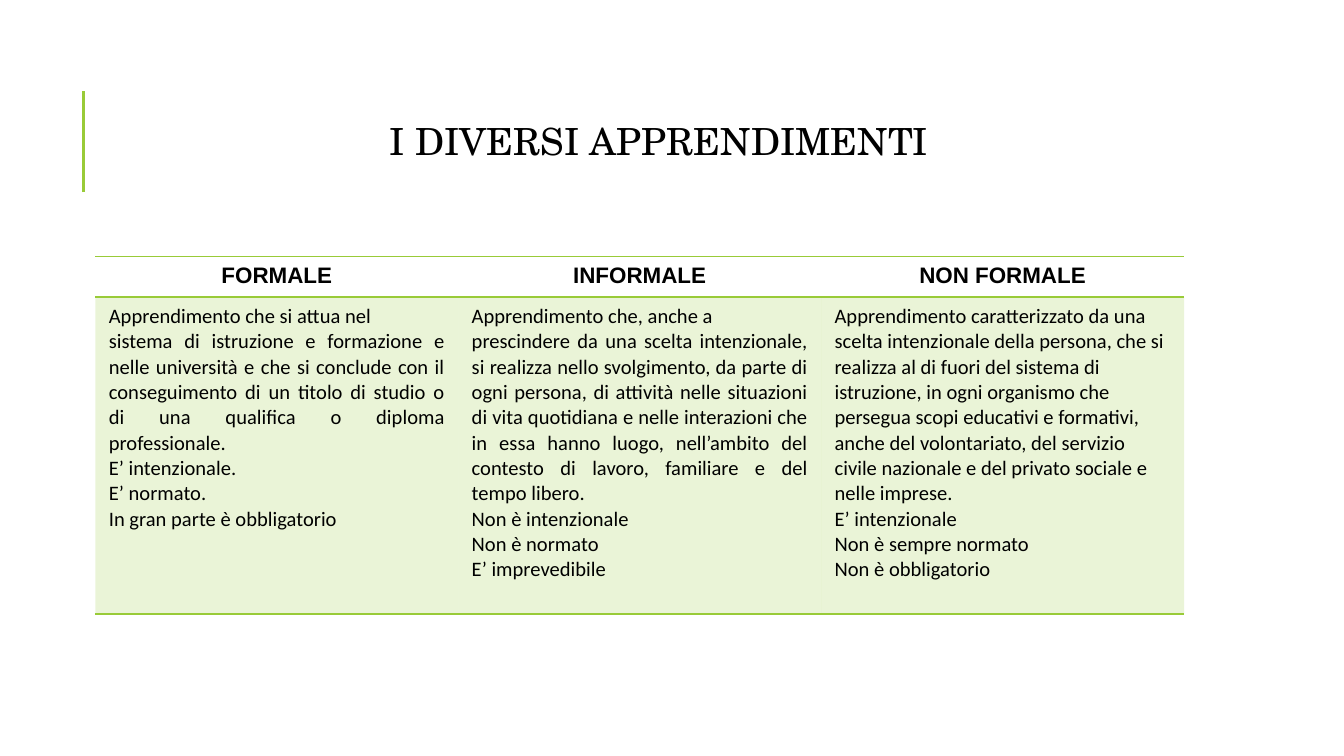
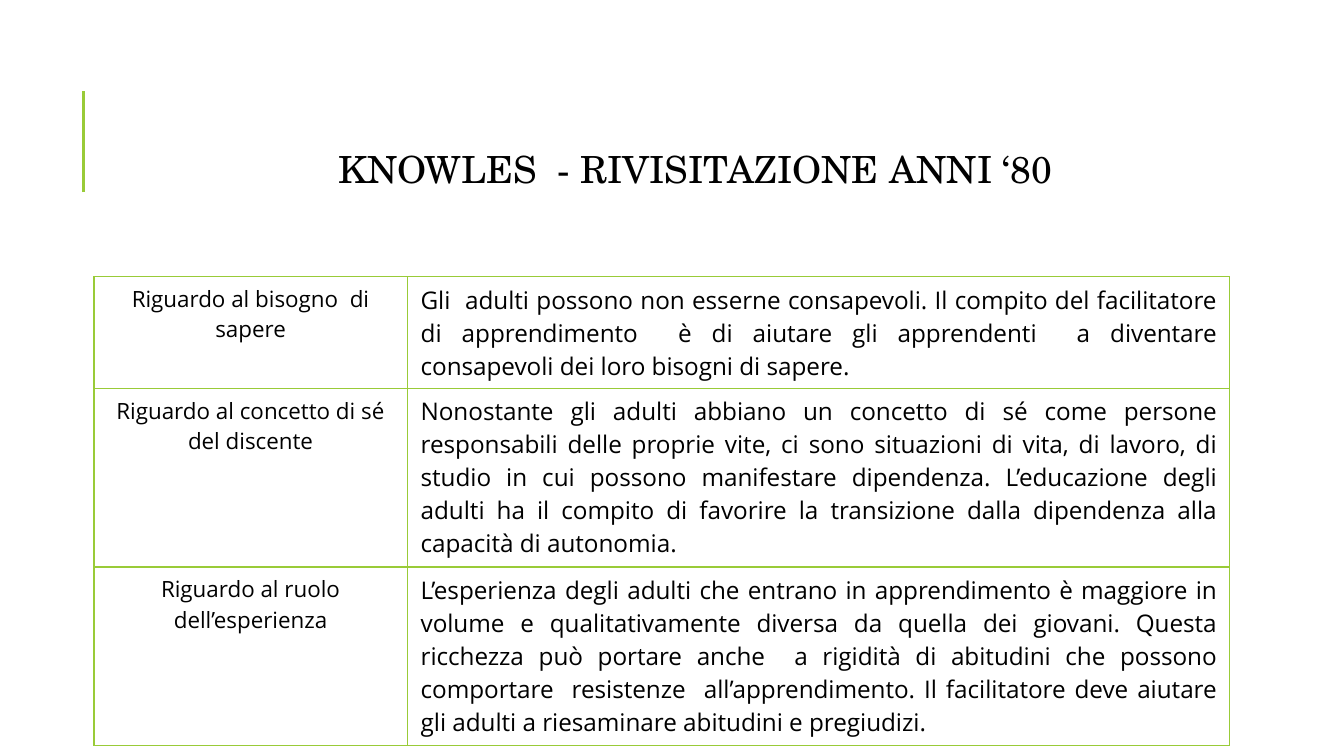
from lxml.etree import SubElement
from pptx import Presentation
from pptx.dml.color import RGBColor
from pptx.enum.shapes import MSO_CONNECTOR
from pptx.enum.text import MSO_ANCHOR, PP_ALIGN
from pptx.oxml import parse_xml
from pptx.oxml.ns import nsdecls, qn
from pptx.util import Inches, Pt

GREEN = RGBColor(0x99, 0xCB, 0x38)
BLACK = RGBColor(0x00, 0x00, 0x00)
WHITE = RGBColor(0xFF, 0xFF, 0xFF)
TITLE_FONT = "TeX Gyre Schola"
LEFT, CENTER, JUSTIFY = PP_ALIGN.LEFT, PP_ALIGN.CENTER, PP_ALIGN.JUSTIFY

LEARNING = [
    ("FORMALE", JUSTIFY, [
        "Apprendimento che si attua nel",
        "sistema di istruzione e formazione e nelle università e che si conclude con il "
        "conseguimento di un titolo di studio o di una qualifica o diploma professionale.",
        "E’ intenzionale.",
        "E’ normato.",
        "In gran parte è obbligatorio",
    ]),
    ("INFORMALE", JUSTIFY, [
        "Apprendimento che, anche a",
        "prescindere da una scelta intenzionale, si realizza nello svolgimento, da parte di "
        "ogni persona, di attività nelle situazioni di vita quotidiana e nelle interazioni che "
        "in essa hanno luogo, nell’ambito del contesto di lavoro, familiare e del tempo libero.",
        "Non è intenzionale",
        "Non è normato",
        "E’ imprevedibile",
    ]),
    ("NON FORMALE", LEFT, [
        "Apprendimento caratterizzato da una scelta intenzionale della persona, che si realizza "
        "al di fuori del sistema di istruzione, in ogni organismo che persegua scopi educativi e "
        "formativi, anche del volontariato, del servizio civile nazionale e del privato sociale e",
        "nelle imprese.",
        "E’ intenzionale",
        "Non è sempre normato",
        "Non è obbligatorio",
    ]),
]

KNOWLES = [
    ("Riguardo al bisogno  di sapere",
     "Gli  adulti possono non esserne consapevoli. Il compito del facilitatore di "
     "apprendimento  è di aiutare gli apprendenti  a diventare consapevoli dei loro bisogni "
     "di sapere."),
    ("Riguardo al concetto di sé del discente",
     "Nonostante gli adulti abbiano un concetto di sé come persone responsabili delle proprie "
     "vite, ci sono situazioni di vita, di lavoro, di studio in cui possono manifestare "
     "dipendenza. L’educazione degli adulti ha il compito di favorire la transizione dalla "
     "dipendenza alla capacità di autonomia."),
    ("Riguardo al ruolo dell’esperienza",
     "L’esperienza degli adulti che entrano in apprendimento è maggiore in volume e "
     "qualitativamente diversa da quella dei giovani. Questa ricchezza può portare anche  a "
     "rigidità di abitudini che possono comportare  resistenze  all’apprendimento. Il "
     "facilitatore deve aiutare gli adulti a riesaminare abitudini e pregiudizi."),
]


def write(tf, text, font, size, align=LEFT, bold=False, spacing=None):
    """Write each line of text as a formatted paragraph."""
    for i, line in enumerate(text.split("\n")):
        p = tf.add_paragraph() if i else tf.paragraphs[0]
        p.alignment = align
        if spacing:
            p.line_spacing = spacing
        r = p.add_run()
        r.text = line
        r.font.name, r.font.size, r.font.bold = font, Pt(size), bold
        r.font.color.rgb = BLACK


class Deck:
    """Holds the shared style and the current slide."""

    def __init__(self):
        self.prs = Presentation()
        self.prs.slide_width = Inches(10)
        self.prs.slide_height = Inches(10) * 9 // 16
        self.s = None

    def slide(self):
        """Start a white slide with the green accent line."""
        self.s = self.prs.slides.add_slide(self.prs.slide_layouts[6])
        fill = self.s.background.fill
        fill.solid()
        fill.fore_color.rgb = WHITE
        line = self.s.shapes.add_connector(
            MSO_CONNECTOR.STRAIGHT, Inches(0.62), Inches(1.43), Inches(0.62), Inches(0.68))
        line.line.color.rgb, line.line.width = GREEN, Pt(1.5)
        SubElement(line._element.spPr, qn("a:effectLst"))

    def title(self, text, x, y, w, h, top=0.1, bottom=0.1, anchor=MSO_ANCHOR.TOP, spacing=None):
        """Add a centred title."""
        tf = self.s.shapes.add_textbox(Inches(x), Inches(y), Inches(w), Inches(h)).text_frame
        tf.word_wrap, tf.vertical_anchor = True, anchor
        tf.margin_top, tf.margin_bottom = Inches(top), Inches(bottom)
        write(tf, text, TITLE_FONT, 20, CENTER, spacing=spacing)

    def table(self, x, y, cols, rows):
        """Add an unstyled table with the given column widths and row heights."""
        shape = self.s.shapes.add_table(len(rows), len(cols), Inches(x), Inches(y),
                                        Inches(sum(cols)), Inches(sum(rows)))
        tbl = shape.table
        tbl.first_row = tbl.horz_banding = False
        for col, w in zip(tbl.columns, cols):
            col.width = Inches(w)
        for row, h in zip(tbl.rows, rows):
            row.height = Inches(h)
        return tbl

    def cell(self, cell, text, font, size, align, edges, width, tint=None, bold=False):
        """Fill a table cell with text, a tint in percent and green borders on some edges."""
        write(cell.text_frame, text, font, size, align, bold)
        if tint:
            cell.fill.solid()
            cell.fill.fore_color.rgb = GREEN
        else:
            cell.fill.background()
        pr = cell._tc.get_or_add_tcPr()
        if tint:
            SubElement(pr.find(".//" + qn("a:srgbClr")), qn("a:alpha"), val=str(tint * 1000))
        for i, edge in enumerate("LRTB"):
            paint = (f'<a:solidFill><a:srgbClr val="{GREEN}"/></a:solidFill>'
                     if edge in edges else "<a:noFill/>")
            pr.insert(i, parse_xml(
                f'<a:ln{edge} {nsdecls("a")} w="{Pt(width)}">{paint}</a:ln{edge}>'))


def learning_slide(deck):
    """Compare the three kinds of learning."""
    deck.slide()
    deck.title("I DIVERSI APPRENDIMENTI", 0.92, 0.78, 7.97, 1.23, top=0.05, bottom=0.69,
               anchor=MSO_ANCHOR.MIDDLE, spacing=0.8)
    tbl = deck.table(0.71, 1.91, [2.7] * 3, [0.29, 2.36])
    for c, (kind, align, lines) in enumerate(LEARNING):
        deck.cell(tbl.cell(0, c), kind, "Arial", 12, CENTER, "TB", 1, bold=True)
        deck.cell(tbl.cell(1, c), "\n".join(lines), "Calibri", 11, align, "TB", 1, tint=20)


def knowles_slide(deck):
    """List the revisited principles."""
    deck.slide()
    deck.title("KNOWLES  - RIVISITAZIONE ANNI ‘80", 1.02, 0.99, 8.31, 0.57)
    tbl = deck.table(0.7, 2.06, [2.33, 6.12], [0.83, 1.33, 1.33])
    for r, (topic, detail) in enumerate(KNOWLES):
        deck.cell(tbl.cell(r, 0), topic, "Open Sans", 12, CENTER, "LRTB", 0.75)
        deck.cell(tbl.cell(r, 1), detail, "Open Sans", 13, JUSTIFY, "LRTB", 0.75)


def main():
    """Build and save the slides."""
    deck = Deck()
    learning_slide(deck)
    knowles_slide(deck)
    deck.prs.save("out.pptx")


if __name__ == "__main__":
    main()
